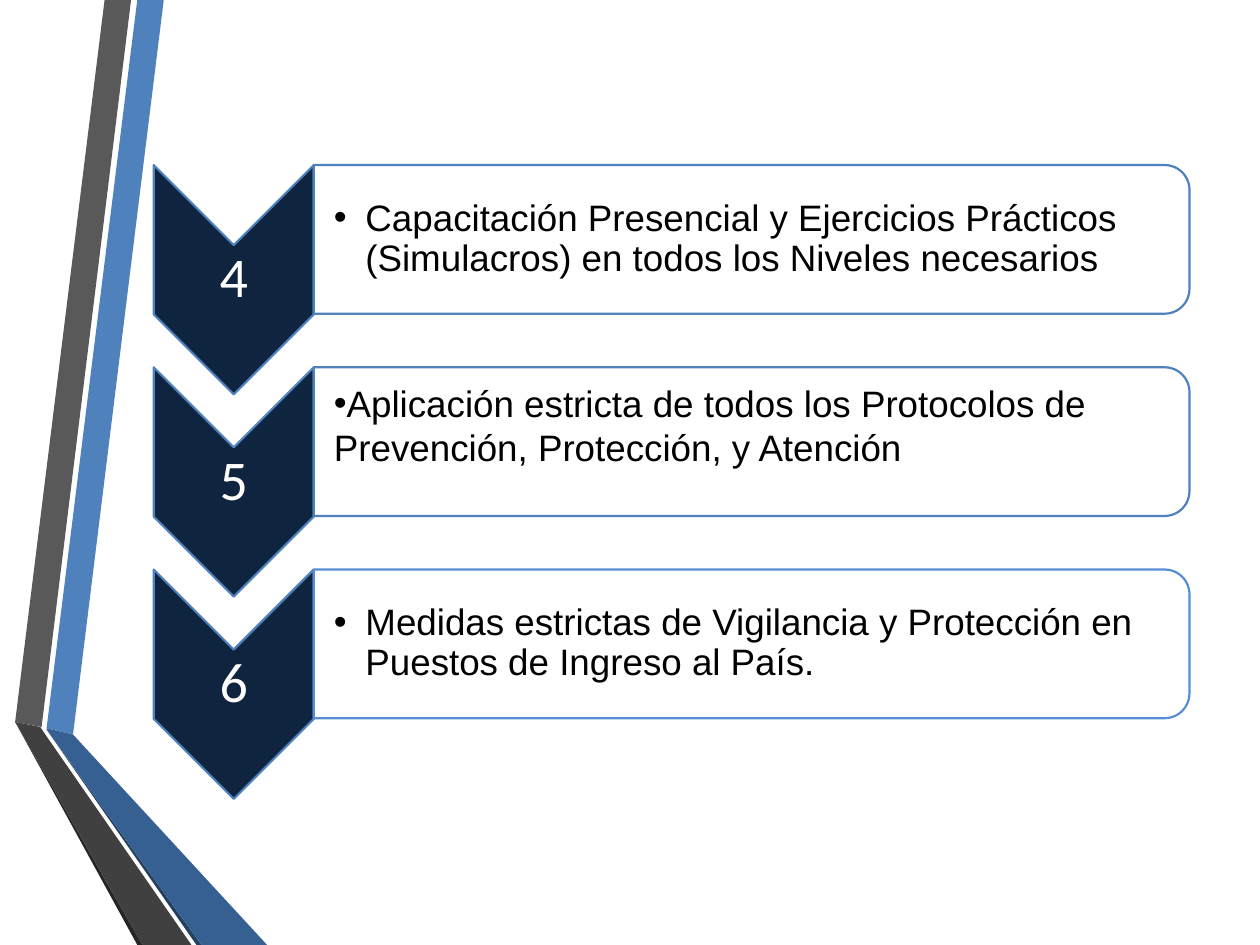
"""Build a slide with three numbered chevron steps beside a folded ribbon."""
from lxml import etree
from pptx import Presentation, util as u
from pptx.dml.color import RGBColor
from pptx.enum import shapes, text
from pptx.oxml.ns import qn

W, H = 10, 7.5
COLORS = {"blue": "4F81BD", "sky": "558ED5", "navy": "0F243E", "white": "FFFFFF",
          "black": "000000", "gray": "595959", "coal": "262626", "deep": "254061",
          "steel": "376092", "dark": "404040"}
RIBBONS = [
    ("blue", [(0.37, 5.78), (0.58, 5.83), (1.3, 0), (1.09, 0)]),
    ("gray", [(1.04, 0), (0.83, 0), (0.12, 5.73), (0.33, 5.77)]),
    ("coal", [(0.12, 5.73), (1.09, H), (1.13, H)]),
    ("deep", [(0.37, 5.79), (1.56, H), (1.6, H)]),
    ("steel", [(0.37, 5.79), (1.6, H), (2.12, H), (0.58, 5.83), (0.37, 5.78)]),
    ("dark", [(1.52, H), (0.36, 5.83), (0.32, 5.77), (0.12, 5.73), (1.13, H)]),
]
HANGING = {"indent": 0.25, "line": 0.9, "anchor": text.MSO_ANCHOR.MIDDLE, "top": 0.01}
FLUSH = {"indent": 0, "line": 1.0, "anchor": text.MSO_ANCHOR.TOP, "top": 0.05}
STEPS = [
    ("4", "Capacitación Presencial y Ejercicios Prácticos (Simulacros) en todos los "
          "Niveles necesarios", "blue", HANGING),
    ("5", "Aplicación estricta de todos los Protocolos de Prevención, Protección, "
          "y Atención", "blue", FLUSH),
    ("6", "Medidas estrictas de Vigilancia y Protección en Puestos de Ingreso al País.",
     "sky", HANGING),
]
LEFT, TOP, PITCH = 1.22, 1.31, 1.605
CHEVRON_W, CHEVRON_H = 1.27, 1.82
PANEL_W, PANEL_H, PAD = 6.95, 1.18, 0.06
NUMBER_H = CHEVRON_H - CHEVRON_W


def rgb(name):
    return RGBColor.from_string(COLORS[name])


def paint(sp, fill, line=None):
    sp.shadow.inherit = False
    sp.fill.solid()
    sp.fill.fore_color.rgb = rgb(fill)
    if line:
        sp.line.color.rgb = rgb(line)
        sp.line.width = u.Pt(1.25)
    else:
        sp.line.fill.background()


def add_ribbon(s, color, points):
    start, *rest = [(u.Inches(x), u.Inches(y)) for x, y in points]
    fb = s.shapes.build_freeform(*start)
    fb.add_line_segments(rest, close=True)
    paint(fb.convert_to_shape(), color)


def add_turned(s, kind, x, y, w, h, fill, line):
    box = (x + (w - h) / 2, y + (h - w) / 2, h, w)
    sp = s.shapes.add_shape(kind, *map(u.Inches, box))
    sp.rotation = 90
    paint(sp, fill, line)
    return sp


def add_text(s, box, words, insets, anchor, font, line, align, indent=None):
    tf = s.shapes.add_textbox(*map(u.Inches, box)).text_frame
    tf.word_wrap = True
    tf.vertical_anchor = anchor
    for side, inset in zip(("left", "top", "right", "bottom"), insets):
        setattr(tf, f"margin_{side}", u.Inches(inset))
    p = tf.paragraphs[0]
    p.alignment, p.line_spacing = align, line
    if indent is not None:
        pPr = p._p.get_or_add_pPr()
        pPr.set("marL", str(u.Inches(indent)))
        pPr.set("indent", str(-u.Inches(indent)))
        etree.SubElement(pPr, qn("a:buFont")).set("typeface", "Arial")
        etree.SubElement(pPr, qn("a:buChar")).set("char", "•")
    r = p.add_run()
    r.text = words
    color, *values = font
    for key, value in zip(("name", "size"), values):
        setattr(r.font, key, value)
    r.font.color.rgb = rgb(color)


def add_step(s, row, number, words, outline, style):
    y = TOP + row * PITCH
    x = LEFT + CHEVRON_W
    kinds = shapes.MSO_SHAPE
    add_turned(s, kinds.CHEVRON, LEFT, y, CHEVRON_W, CHEVRON_H, "navy", "blue")
    add_text(s, (LEFT, y + CHEVRON_W / 2, CHEVRON_W, NUMBER_H), number, [0.02] * 4,
             text.MSO_ANCHOR.MIDDLE, ("white", "Calibri", u.Pt(32)), 0.9,
             text.PP_ALIGN.CENTER)
    panel = add_turned(s, kinds.ROUND_2_SAME_RECTANGLE, x, y, PANEL_W, PANEL_H,
                       "white", outline)
    color = panel.fill._xPr.find(qn("a:solidFill"))[0]
    etree.SubElement(color, qn("a:alpha")).set("val", "90000")
    add_text(s, (x, y + PAD, PANEL_W - PAD, PANEL_H - 2 * PAD), words,
             (0.16, style["top"], 0.01, 0.01), style["anchor"],
             ("black", "Arial", u.Pt(21)), style["line"], text.PP_ALIGN.LEFT,
             style["indent"])


def main():
    prs = Presentation()
    prs.slide_width, prs.slide_height = u.Inches(W), u.Inches(H)
    s = prs.slides.add_slide(prs.slide_layouts[6])
    for ribbon in RIBBONS:
        add_ribbon(s, *ribbon)
    for row, step in enumerate(STEPS):
        add_step(s, row, *step)
    prs.save("out.pptx")


if __name__ == "__main__":
    main()
